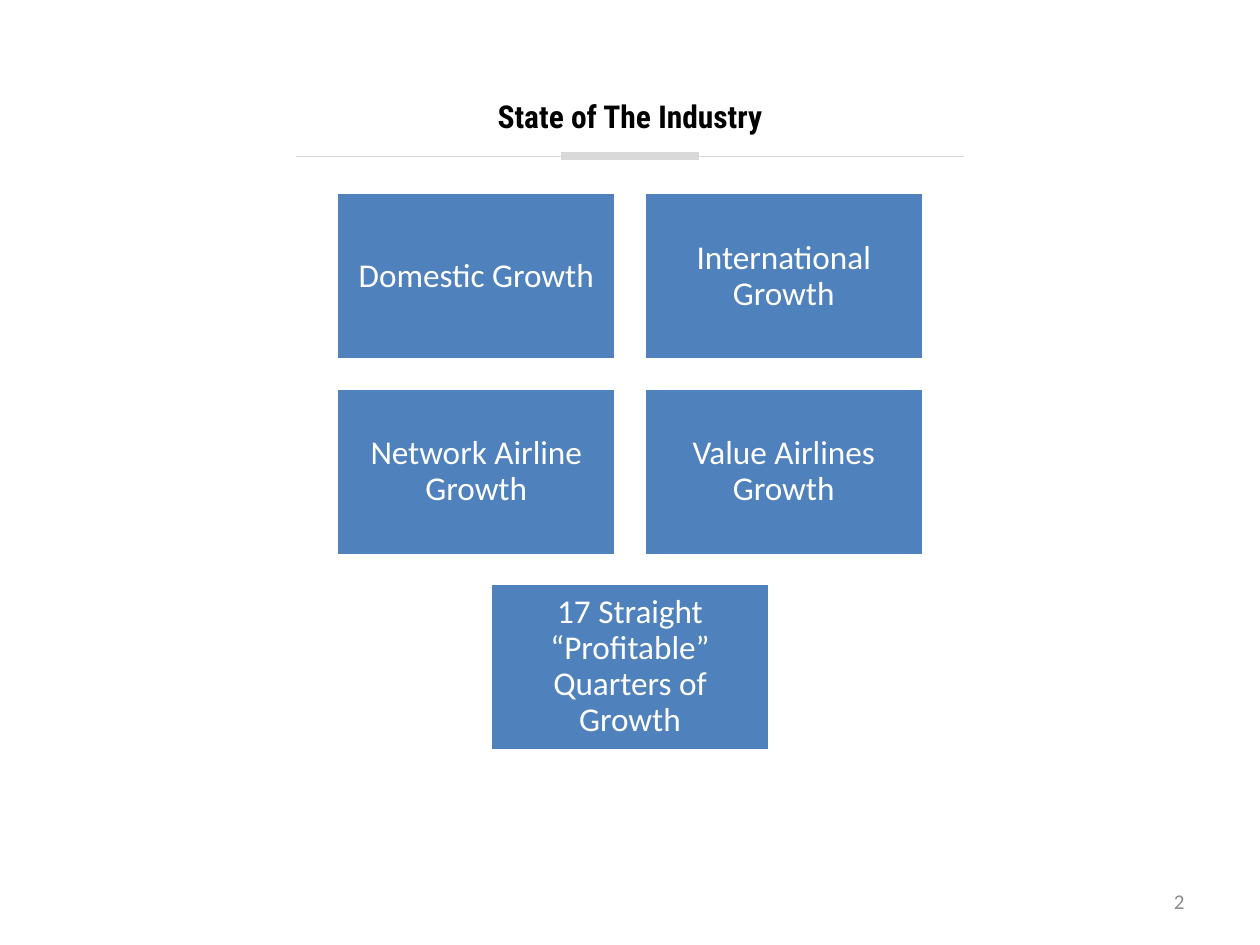
"""Build the State of The Industry slide with its grid of growth boxes."""
import pptx
import pptx.util
import pptx.dml.color
import pptx.enum.shapes
import pptx.enum.text
import pptx.oxml.ns
import lxml.etree

Inches = pptx.util.Inches
Pt = pptx.util.Pt
RGBColor = pptx.dml.color.RGBColor
PP_ALIGN = pptx.enum.text.PP_ALIGN
MSO_ANCHOR = pptx.enum.text.MSO_ANCHOR

BLACK = RGBColor(0x00, 0x00, 0x00)
WHITE = RGBColor(0xFF, 0xFF, 0xFF)
BLUE = RGBColor(0x4F, 0x81, 0xBD)
RULE_GREY = RGBColor(0xD9, 0xD9, 0xD9)
NUMBER_GREY = RGBColor(0x8C, 0x8C, 0x8C)

SLIDE_W, SLIDE_H = 10, 7.5
BOX_W, BOX_H, GAP = 2.22, 1.33, 0.22
GRID_TOP = 1.53
RULE_Y = 1.24
BOX_ROWS = [
    ["Domestic Growth", "International Growth"],
    ["Network Airline Growth", "Value Airlines Growth"],
    ["17 Straight “Profitable” Quarters of Growth"],
]


def apply(obj, values):
    for name, value in values.items():
        setattr(obj, name, value)


def place(s, left, top, width, height):
    apply(s, {"left": Inches(left), "top": Inches(top),
              "width": Inches(width), "height": Inches(height)})


def write(s, text, font, color, paragraph, inset=None):
    tf = s.text_frame
    apply(tf, {"word_wrap": True, "vertical_anchor": MSO_ANCHOR.MIDDLE})
    if inset is not None:
        sides = ("left", "top", "right", "bottom")
        apply(tf, {f"margin_{side}": Inches(inset) for side in sides})
    p = tf.paragraphs[0]
    apply(p, paragraph)
    r = p.add_run()
    r.text = text
    apply(r.font, font)
    r.font.color.rgb = color


def add_title(slide, text):
    s = slide.shapes.title
    place(s, 0, 0.75, SLIDE_W, 0.34)
    write(s, text, {"name": "Roboto Condensed", "size": Pt(18), "bold": True},
          BLACK, {"alignment": PP_ALIGN.CENTER}, 0.02)


def add_rule(slide, length, weight):
    left = (SLIDE_W - length) / 2
    s = slide.shapes.add_connector(
        pptx.enum.shapes.MSO_CONNECTOR.STRAIGHT, Inches(left), Inches(RULE_Y),
        Inches(left + length), Inches(RULE_Y))
    s.line.color.rgb = RULE_GREY
    s.line.width = Pt(weight)
    lxml.etree.SubElement(s._element.spPr, pptx.oxml.ns.qn("a:effectLst"))


def add_box(slide, text, left, top):
    s = slide.shapes.add_shape(
        pptx.enum.shapes.MSO_SHAPE.RECTANGLE, Inches(left), Inches(top),
        Inches(BOX_W), Inches(BOX_H))
    s.shadow.inherit = False
    s.fill.solid()
    s.fill.fore_color.rgb = BLUE
    s.line.color.rgb = WHITE
    s.line.width = Pt(2)
    write(s, text, {"name": "Calibri", "size": Pt(19)}, WHITE,
          {"alignment": PP_ALIGN.CENTER, "line_spacing": 0.9}, 0.08)


def add_box_grid(slide, rows):
    for i, row in enumerate(rows):
        row_w = len(row) * (BOX_W + GAP) - GAP
        for j, text in enumerate(row):
            left = (SLIDE_W - row_w) / 2 + j * (BOX_W + GAP)
            add_box(slide, text, left, GRID_TOP + i * (BOX_H + GAP))


def add_slide_number(slide, text):
    s = slide.shapes.add_textbox(
        Inches(7.17), Inches(6.95), Inches(2.33), Inches(0.4))
    write(s, text, {"name": "Calibri", "size": Pt(12)}, NUMBER_GREY,
          {"alignment": PP_ALIGN.RIGHT})


def main():
    prs = pptx.Presentation()
    apply(prs, {"slide_width": Inches(SLIDE_W), "slide_height": Inches(SLIDE_H)})
    slide = prs.slides.add_slide(prs.slide_layouts.get_by_name("Title Only"))
    add_title(slide, "State of The Industry")
    add_rule(slide, 5.3, 0.25)
    add_rule(slide, 1.1, 4.5)
    add_slide_number(slide, "2")
    add_box_grid(slide, BOX_ROWS)
    prs.save("out.pptx")


if __name__ == "__main__":
    main()
